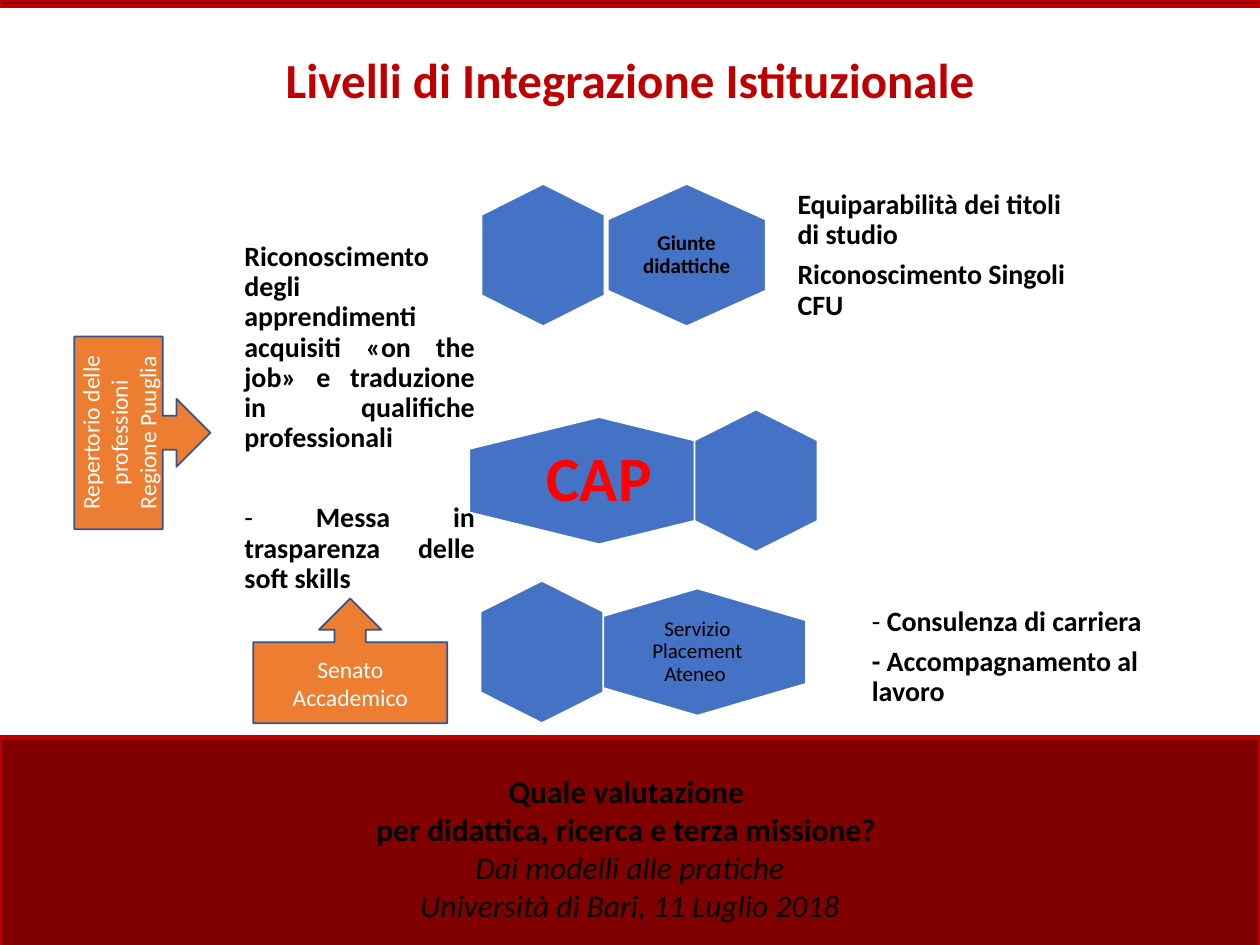
import collections

import pptx
import pptx.dml.color
import pptx.enum.shapes
import pptx.enum.text
import pptx.util

RGBColor = pptx.dml.color.RGBColor
Pt = pptx.util.Pt
SHAPE = pptx.enum.shapes.MSO_SHAPE
ALIGN = pptx.enum.text.PP_ALIGN

BLACK = RGBColor(0x00, 0x00, 0x00)
WHITE = RGBColor(0xFF, 0xFF, 0xFF)
RED = RGBColor(0xFF, 0x00, 0x00)
CRIMSON = RGBColor(0xC0, 0x00, 0x00)
MAROON = RGBColor(0x80, 0x00, 0x00)
BLUE = RGBColor(0x44, 0x72, 0xC4)
NAVY = RGBColor(0x32, 0x54, 0x91)
ORANGE = RGBColor(0xED, 0x7D, 0x31)

CELL = pptx.util.Inches(0.1)  # the slide is a grid of 100 columns and 75 rows
SMALL_W, SMALL_H = 9.8, 11.3  # the plain hexagon found in every row

Box = collections.namedtuple("Box", "x y w h")


def inner(box, x, y, w, h):
    """Box at an offset inside another box."""
    return Box(box.x + x, box.y + y, w, h)


def centred(box, w, h):
    """Box of the given size in the middle of another box."""
    return inner(box, (box.w - w) / 2, (box.h - h) / 2, w, h)


def emu(box):
    return [round(v * CELL) for v in box]


def write(sp, paragraphs, font, align=ALIGN.CENTER, tight=False, inset=None,
          anchor=pptx.enum.text.MSO_ANCHOR.MIDDLE):
    """Fill a shape with paragraphs, each a list of (text, font changes)."""
    tf = sp.text_frame
    tf.word_wrap = True
    tf.vertical_anchor = anchor
    if inset is not None:
        for side in ("left", "top", "right", "bottom"):
            setattr(tf, "margin_" + side, pptx.util.Inches(inset))
    for i, runs in enumerate(paragraphs):
        p = tf.paragraphs[0] if i == 0 else tf.add_paragraph()
        p.alignment = align
        if tight:
            p.line_spacing = 0.9
            p.space_after = Pt(0.35 * font["size"])
        for text, changes in runs:
            r = p.add_run()
            r.text = text
            style = {"name": "Calibri", **font, **changes}
            r.font.color.rgb = style.pop("color")
            r.font.size = Pt(style.pop("size"))
            for name, value in style.items():
                setattr(r.font, name, value)
    return tf


def add_text(s, box, paragraphs, font, **layout):
    return write(s.shapes.add_textbox(*emu(box)), paragraphs, font, **layout)


def add_filled(s, kind, box, fill, line, width):
    sp = s.shapes.add_shape(kind, *emu(box))
    sp.shadow.inherit = False
    sp.fill.solid()
    sp.fill.fore_color.rgb = fill
    sp.line.color.rgb = line
    sp.line.width = Pt(width)
    return sp


def add_turned(s, kind, box, angle, *colours):
    """Shape turned by a quarter so that it covers the given box."""
    sp = add_filled(s, kind, centred(box, box.h, box.w), *colours)
    sp.rotation = angle
    return sp


def add_hexagon(s, box):
    sp = add_turned(s, SHAPE.HEXAGON, box, 90, BLUE, WHITE, 1)
    sp.adjustments[0] = 0.25
    sp.adjustments[1] = 1.15


def add_header(s, box):
    add_text(s, box, [[("Livelli di Integrazione Istituzionale", {})]],
             {"size": 28, "color": CRIMSON, "bold": True})
    add_filled(s, SHAPE.RECTANGLE, inner(box, 0, 0, box.w, 0.5), MAROON, CRIMSON, 2)


def add_hexagon_row(s, box, main, small_x, label, font, label_size, inset):
    """Named hexagon and plain hexagon, both centred on the row's height."""
    x, w, h = main
    main_box = inner(box, x, (box.h - h) / 2, w, h)
    add_hexagon(s, main_box)
    add_hexagon(s, inner(box, small_x, (box.h - SMALL_H) / 2, SMALL_W, SMALL_H))
    add_text(s, centred(main_box, *label_size), [[(label, {})]],
             font, tight=True, inset=inset)


def add_note(s, box, paragraphs, align=ALIGN.LEFT):
    return add_text(s, box, paragraphs, {"size": 16, "color": BLACK, "bold": True},
                    align=align, tight=True, inset=0.07)


def add_diagram(s, box):
    plain = {"bold": False}
    small = {"size": 12, "color": BLACK}
    rows = [
        (0, (29.5, 12.6, 11.3), 19.5, "Giunte didattiche",
         {**small, "bold": True}, (8.4, 7.6), 0.05),
        (17.9, (18.5, 20.7, 10.1), 36.4, "CAP",
         {"size": 36, "color": RED, "bold": True}, (13.8, 6.7), 0.15),
        (31.5, (28, 17.3, 10.1), 19.4, "Servizio Placement Ateneo ",
         small, (11.5, 6.7), 0.05),
    ]
    for y, *parts in rows:
        add_hexagon_row(s, inner(box, 0, y, box.w, SMALL_H), *parts)

    add_note(s, inner(box, 43.9, -4.2, 23.4, 19.8), [
        [("Equiparabilità dei titoli di studio", {})],
        [("Riconoscimento Singoli CFU", {})]])
    add_note(s, inner(box, 49.8, 34.2, 24, 6.8), [
        [("- ", plain), ("Consulenza di carriera", {})],
        [("- Accompagnamento al lavoro", {})]])
    tf = add_note(s, inner(box, 0, 10.8, 19.7, 19.4), [
        [("Riconoscimento degli apprendimenti acquisiti «on the job» "
          "e traduzione in qualifiche professionali", {})],
        [("- ", plain), ("Messa in trasparenza delle soft skills", {})]],
        ALIGN.JUSTIFY)
    tf.paragraphs[1].space_before = Pt(23)
    tf.margin_bottom = pptx.util.Inches(0.45)


def add_callouts(s, box):
    font = {"size": 13.5, "color": WHITE}
    colours = (ORANGE, NAVY, 1)
    sp = add_turned(s, SHAPE.DOWN_ARROW_CALLOUT, inner(box, 0, 0, 10.8, 15.3),
                    270, *colours)
    write(sp, [[("Repertorio delle professioni Regione Puuglia", {})]], font)
    sp = add_filled(s, SHAPE.UP_ARROW_CALLOUT, inner(box, 14.2, 20.8, 15.4, 9.9),
                    *colours)
    write(sp, [[("Senato Accademico", {})]], font)


def add_footer(s, box):
    italic = {"bold": False, "italic": True}
    sp = add_filled(s, SHAPE.RECTANGLE, box, MAROON, CRIMSON, 2)
    write(sp, [[("Quale valutazione ", {})],
               [("per didattica, ricerca e terza missione? ", {})],
               [("Dai modelli alle pratiche", italic)],
               [("Università di Bari, 11 Luglio 2018", italic)]],
          {"size": 18, "color": BLACK, "bold": True})


def main():
    prs = pptx.Presentation()
    prs.slide_width, prs.slide_height = 100 * CELL, 75 * CELL
    s = prs.slides.add_slide(prs.slide_layouts[6])
    add_header(s, Box(0, 0, 100, 12.5))
    add_diagram(s, Box(18.7, 14.6, 73.8, 42.8))
    add_callouts(s, Box(5.9, 26.7, 29.6, 30.7))
    add_footer(s, Box(0, 58.5, 100, 17.6))
    prs.save("out.pptx")


if __name__ == "__main__":
    main()
